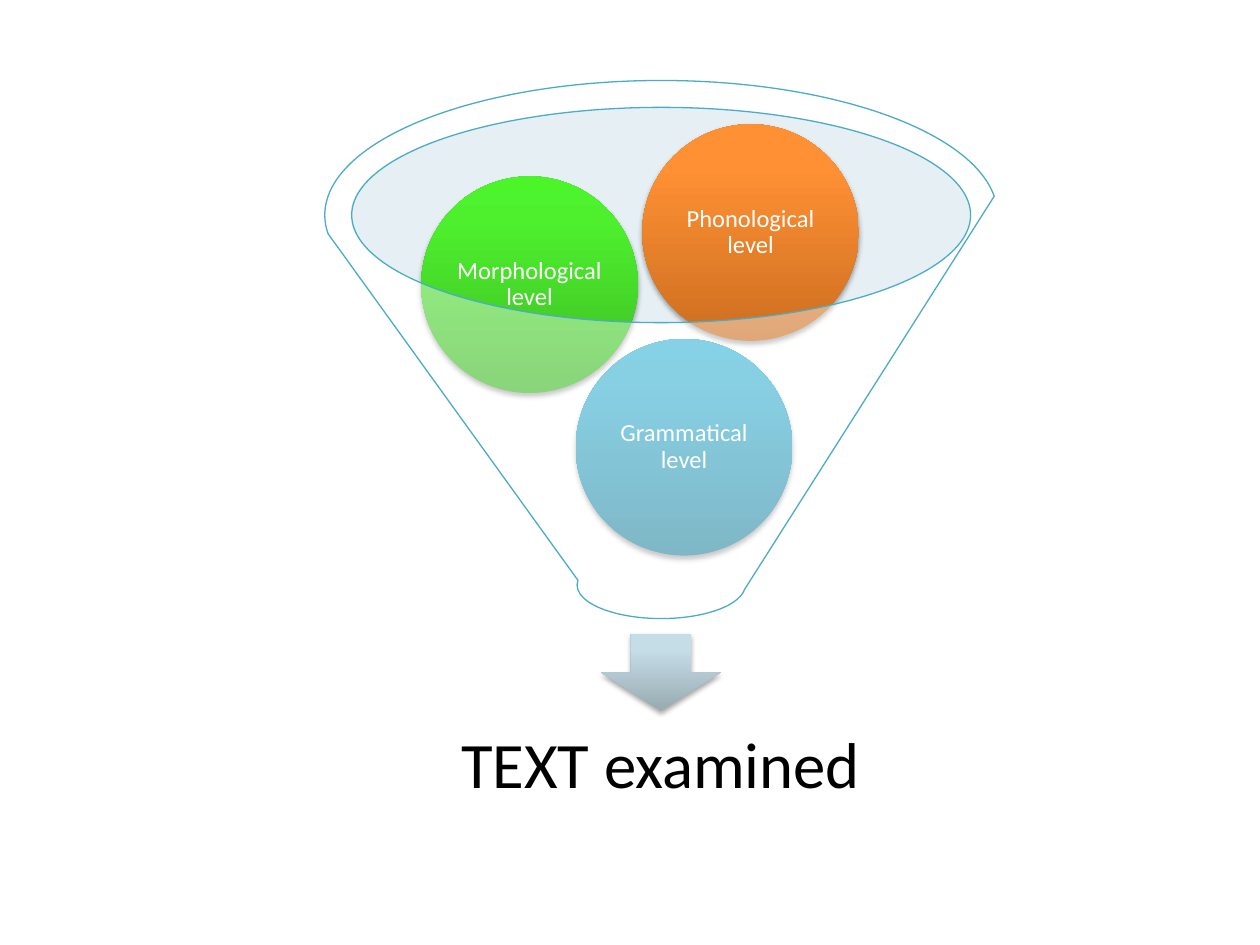
from copy import deepcopy

from lxml import etree
from pptx import Presentation
from pptx.dml.color import RGBColor
from pptx.enum.shapes import MSO_SHAPE
from pptx.enum.text import MSO_ANCHOR, PP_ALIGN
from pptx.oxml.ns import qn
from pptx.util import Pt

ELLIPSE = MSO_SHAPE.OVAL
DOWN_ARROW = MSO_SHAPE.DOWN_ARROW
FUNNEL = MSO_SHAPE.FUNNEL
MIDDLE = MSO_ANCHOR.MIDDLE
CENTER = PP_ALIGN.CENTER

BLACK = RGBColor(0x00, 0x00, 0x00)
WHITE = RGBColor(0xFF, 0xFF, 0xFF)
TEAL = RGBColor(0x4B, 0xAC, 0xC6)
PALE_BLUE = RGBColor(0xC1, 0xDB, 0xE5)


def shades(*codes):
    return [RGBColor.from_string(code) for code in codes]


# Gradient colours run from the bottom of a shape to its top.
STOPS = (0, 0.8, 1)
GREY_BLUE = shades("98AAB2", "C5DDE7", "C6DEE9")
BLUE = shades("2A88A2", "37B1D2", "34B4D6")
GREEN = shades("3CB923", "4EF02E", "4CF52A")
ORANGE = shades("CC6E20", "FF9034", "FF9136")

BALL_SIZE = 123.8
BALLS = [
    ("Grammatical level", 329, 193.7, BLUE),
    ("Morphological level", 240.7, 100.8, GREEN),
    ("Phonological level", 367, 71, ORANGE),
]


class FunnelSlide:
    font = "Calibri"
    opacity = 40
    line_width = 0.75

    def __init__(self, slide):
        self.shapes = slide.shapes

    def shape(self, kind, x, y, w, h):
        sp = self.shapes.add_shape(kind, Pt(x), Pt(y), Pt(w), Pt(h))
        sp.shadow.inherit = False
        sp.line.fill.background()
        return sp

    def glass(self, kind, x, y, w, h, color, line=None):
        """Add a see-through shape, outlined if a line colour is given."""
        sp = self.shape(kind, x, y, w, h)
        sp.fill.solid()
        sp.fill.fore_color.rgb = color
        rgb = sp._element.spPr.find(qn("a:solidFill")).find(qn("a:srgbClr"))
        etree.SubElement(rgb, qn("a:alpha"), val=str(self.opacity * 1000))
        if line is not None:
            sp.line.color.rgb = line
            sp.line.width = Pt(self.line_width)
        return sp

    def glossy(self, kind, x, y, w, h, colors):
        """Add a shape with a vertical gradient and a soft shadow below."""
        sp = self.shape(kind, x, y, w, h)
        sp.fill.gradient()
        sp.fill.gradient_angle = 90
        spPr = sp._element.spPr
        stops = spPr.find(qn("a:gradFill")).find(qn("a:gsLst"))
        stops.append(deepcopy(stops[-1]))
        for stop, position, color in zip(sp.fill.gradient_stops, STOPS, colors):
            stop.position = position
            stop.color.rgb = color
        shadow = etree.SubElement(
            spPr.find(qn("a:effectLst")), qn("a:outerShdw"),
            blurRad=str(Pt(3.1)), dist=str(Pt(1.8)), dir="5400000", rotWithShape="0")
        rgb = etree.SubElement(shadow, qn("a:srgbClr"), val="000000")
        etree.SubElement(rgb, qn("a:alpha"), val="35000")
        return sp

    def label(self, sp, text, size, color, inset):
        tf = sp.text_frame
        tf.text = text
        tf.word_wrap = True
        tf.vertical_anchor = MIDDLE
        tf.margin_left = tf.margin_right = Pt(inset)
        tf.margin_top = tf.margin_bottom = Pt(inset)
        p = tf.paragraphs[0]
        p.alignment = CENTER
        p.line_spacing = 0.9
        font = p.runs[0].font
        font.name = self.font
        font.size = Pt(size)
        font.color.rgb = color

    def ball(self, text, x, y, colors):
        sp = self.glossy(ELLIPSE, x, y, BALL_SIZE, BALL_SIZE, colors)
        self.label(sp, text, 14, WHITE, 1.4)

    def caption(self, text, x, y, w, h):
        sp = self.shapes.add_textbox(Pt(x), Pt(y), Pt(w), Pt(h))
        self.label(sp, text, 37, BLACK, 20.9)


def main():
    prs = Presentation()
    prs.slide_width, prs.slide_height = Pt(720), Pt(540)
    s = FunnelSlide(prs.slides.add_slide(prs.slide_layouts[6]))

    s.glass(ELLIPSE, 200.2, 61.2, 354.2, 123, PALE_BLUE)
    s.glossy(DOWN_ARROW, 343.4, 362.2, 68.6, 44, GREY_BLUE)
    s.caption("TEXT examined", 213, 397.4, 329, 82)
    for ball in BALLS:
        s.ball(*ball)
    s.glass(FUNNEL, 185.6, 46, 384.4, 307.5, WHITE, TEAL)

    prs.save("out.pptx")


if __name__ == "__main__":
    main()
